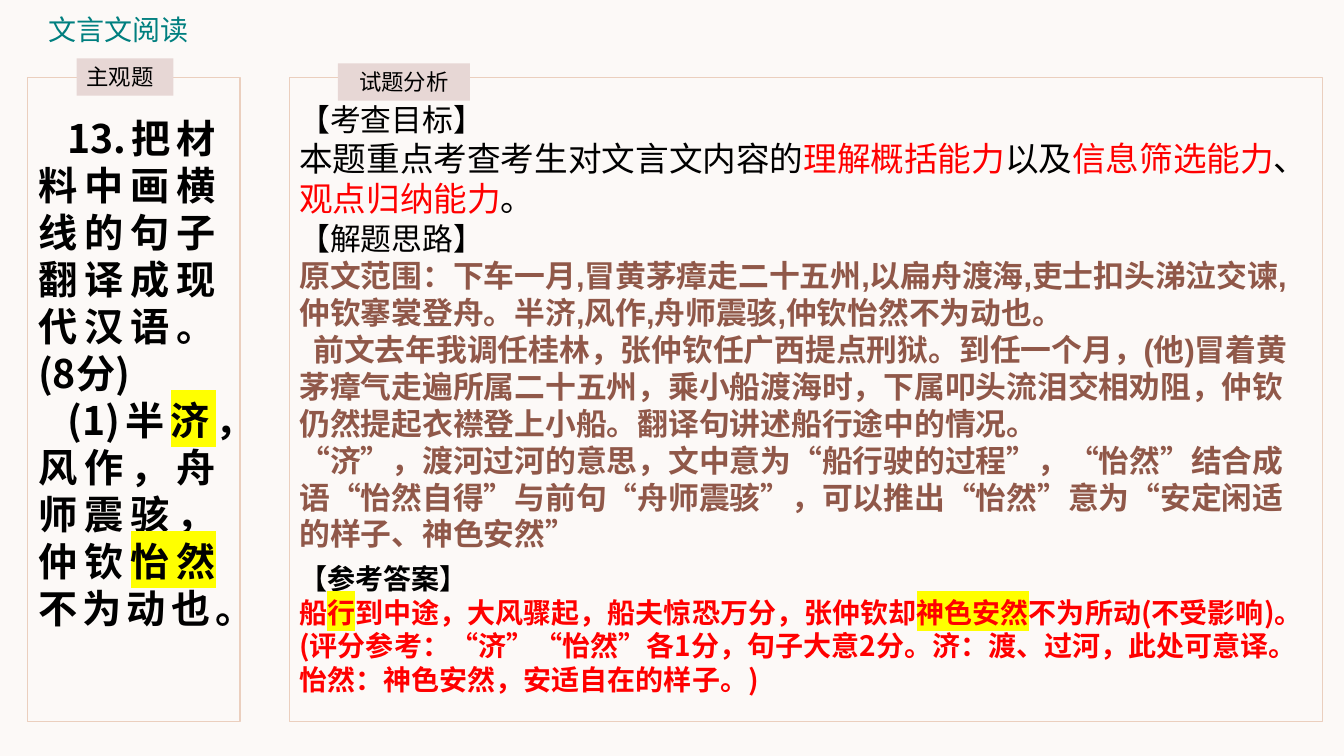
from lxml.etree import SubElement
from pptx import Presentation
from pptx.dml.color import RGBColor
from pptx.enum.shapes import MSO_SHAPE as Shape
from pptx.enum.text import MSO_ANCHOR as Anchor, MSO_AUTO_SIZE as Fit, PP_ALIGN as Align
from pptx.oxml.ns import qn
from pptx.util import Inches, Pt

BLACK = RGBColor(0x00, 0x00, 0x00)
RED = RGBColor(0xFF, 0x00, 0x00)
BROWN = RGBColor(0x90, 0x58, 0x49)
TEAL = RGBColor(0x00, 0x7F, 0x7F)
YELLOW = RGBColor(0xFF, 0xFF, 0x00)
PAPER = RGBColor(0xFC, 0xF9, 0xF7)
PINK = RGBColor(0xE7, 0xD7, 0xD5)
PEACH = RGBColor(0xEB, 0xCF, 0xBE)
NOTO = "Noto Sans CJK SC"
ARIAL = "Arial"
LEFT, WIDTH = 2.87, 10.25


def style(run, size, color, face, bold=False, mark=None):
    """Format a run; mark is an optional highlight colour."""
    font = run.font
    font.size, font.bold = Pt(size), bold
    font.color.rgb = color
    props = font._element
    if mark is not None:
        light = SubElement(props, qn("a:highlight"))
        SubElement(light, qn("a:srgbClr")).set("val", str(mark))
    font.name = face
    SubElement(props, qn("a:ea")).set("typeface", NOTO)


def write(para, parts, size, color, face=NOTO, bold=False, indent=0, align=Align.LEFT):
    """Fill a paragraph with parts: plain strings or (text, colour, mark)."""
    para.alignment = align
    if indent:
        props = para._p.get_or_add_pPr()
        props.set("marL", "0")
        props.set("indent", str(Inches(indent)))
    for part in parts:
        text, tint, mark = (part, color, None) if isinstance(part, str) else part
        run = para.add_run()
        run.text = text
        style(run, size, tint, face, bold, mark)


def frame(slide, left, width):
    box = slide.shapes.add_shape(
        Shape.RECTANGLE, Inches(left), Inches(0.77), Inches(width), Inches(6.39))
    box.shadow.inherit = False
    box.fill.background()
    box.line.color.rgb = PEACH
    box.line.width = Pt(1)


def label(slide, text, left, top, width, face, align):
    box = slide.shapes.add_shape(
        Shape.RECTANGLE, Inches(left), Inches(top), Inches(width), Inches(0.37))
    box.shadow.inherit = False
    box.fill.solid()
    box.fill.fore_color.rgb = PINK
    box.line.fill.background()
    body = box.text_frame
    body.word_wrap = True
    body.vertical_anchor = Anchor.TOP
    body.auto_size = Fit.SHAPE_TO_FIT_TEXT
    write(body.paragraphs[0], [text], 16, BLACK, face, align=align)


def passage(slide, left, top, width, height, paras):
    """Add a text box; paras holds (parts, options for write) pairs."""
    box = slide.shapes.add_textbox(
        Inches(left), Inches(top), Inches(width), Inches(height))
    body = box.text_frame
    body.word_wrap = True
    body.auto_size = Fit.SHAPE_TO_FIT_TEXT
    for index, (parts, look) in enumerate(paras):
        para = body.add_paragraph() if index else body.paragraphs[0]
        write(para, parts, **look)


def main():
    deck = Presentation()
    deck.slide_width, deck.slide_height = Inches(13.33), Inches(7.5)
    slide = deck.slides.add_slide(deck.slide_layouts[6])
    slide.background.fill.solid()
    slide.background.fill.fore_color.rgb = PAPER

    frame(slide, 0.27, 2.11)
    label(slide, "主观题", 0.76, 0.58, 0.96, NOTO, Align.LEFT)
    frame(slide, LEFT, WIDTH)
    label(slide, "试题分析", 3.35, 0.63, 1.31, ARIAL, Align.CENTER)

    head = dict(size=22, color=BLACK, face=ARIAL)
    passage(slide, LEFT, 0.95, WIDTH, 1.28, [
        (["【考查目标】"], head),
        (["本题重点考查考生对文言文内容的", ("理解概括能力", RED, None), "以及",
          ("信息筛选能力", RED, None), "、", ("观点归纳能力", RED, None), "。"],
         dict(size=24, color=BLACK)),
    ])

    think = dict(size=22, color=BROWN, face=ARIAL, bold=True)
    passage(slide, LEFT, 2.13, WIDTH, 3.43, [
        (["【解题思路】"], head),
        (["原文范围：下车一月,冒黄茅瘴走二十五州,以扁舟渡海,吏士扣头涕泣交谏,"
          "仲钦搴裳登舟。半济,风作,舟师震骇,仲钦怡然不为动也。"], think),
        (["前文去年我调任桂林，张仲钦任广西提点刑狱。到任一个月，(他)冒着黄茅瘴气"
          "走遍所属二十五州，乘小船渡海时，下属叩头流泪交相劝阻，仲钦仍然提起衣襟"
          "登上小船。翻译句讲述船行途中的情况。"], dict(think, indent=0.14)),
        (["“济”，渡河过河的意思，文中意为“船行驶的过程”，“怡然”结合成语“怡然自得”"
          "与前句“舟师震骇”，可以推出“怡然”意为“安定闲适的样子、神色安然”"], think),
    ])

    answer = dict(size=20, color=RED, bold=True)
    passage(slide, LEFT, 5.52, WIDTH, 1.45, [
        (["【参考答案】"], dict(answer, color=BLACK, face=ARIAL)),
        (["船", ("行", RED, YELLOW), "到中途，大风骤起，船夫惊恐万分，张仲钦却",
          ("神色安然", RED, YELLOW), "不为所动(不受影响)。"], answer),
        (["(评分参考：“济”“怡然”各1分，句子大意2分。济：渡、过河，此处可意译。"
          "怡然：神色安然，安适自在的样子。)"], answer),
    ])

    passage(slide, 0.38, 0.07, 2.34, 0.44,
            [(["文言文阅读"], dict(size=20, color=TEAL))])

    task = dict(size=28, color=BLACK, bold=True, indent=0.29, align=Align.JUSTIFY)
    passage(slide, 0.28, 1.08, 1.96, 5.28, [
        (["13.把材料中画横线的句子翻译成现代汉语。(8分)"], task),
        (["(1)半", ("济", BLACK, YELLOW), "，风作，舟师震骇，仲钦",
          ("怡然", BLACK, YELLOW), "不为动也。"], task),
    ])
    deck.save("out.pptx")


if __name__ == "__main__":
    main()
